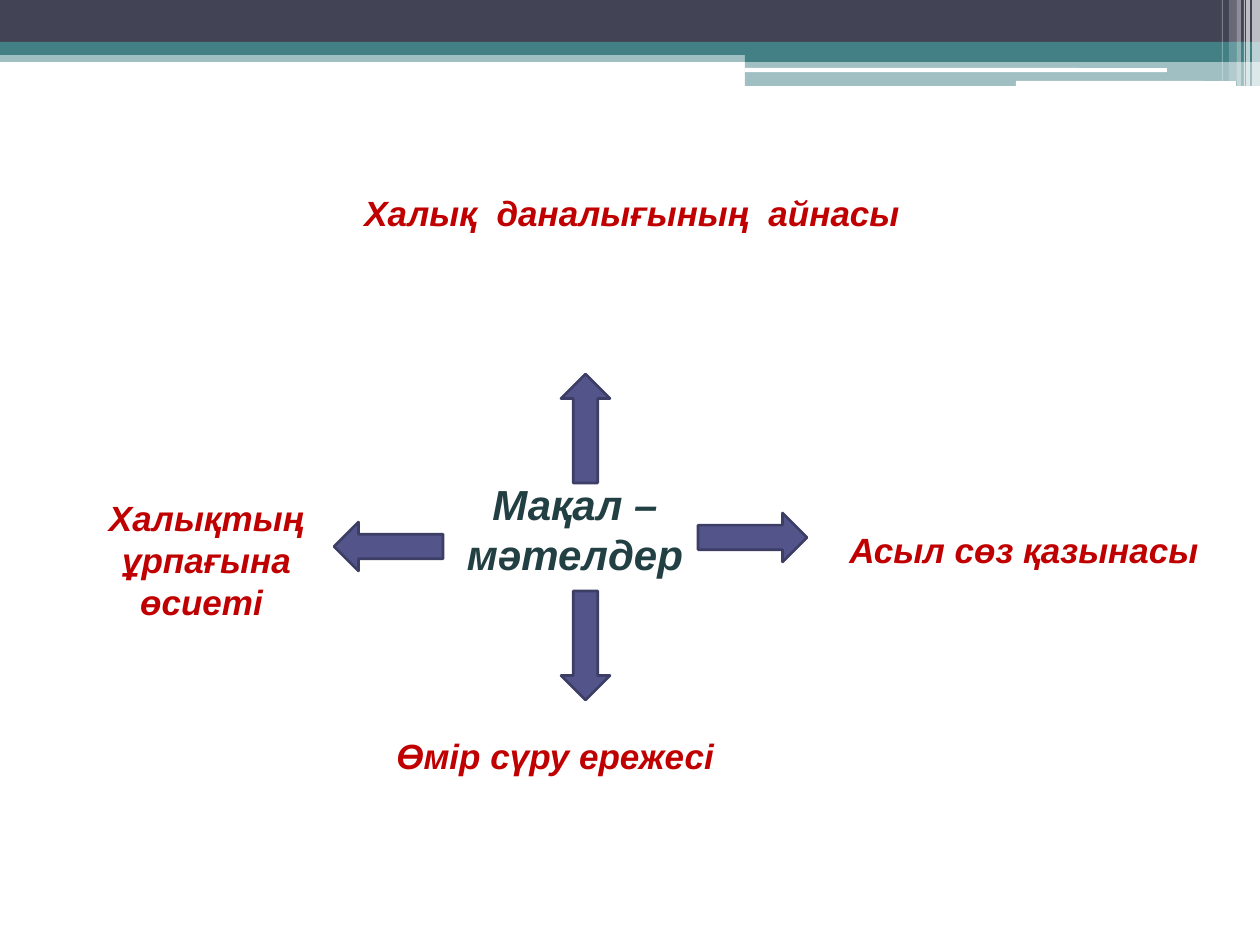
from pptx import Presentation
from pptx.dml.color import RGBColor
from pptx.enum.shapes import MSO_SHAPE
from pptx.enum.text import MSO_ANCHOR, MSO_AUTO_SIZE, PP_ALIGN
from pptx.oxml.ns import qn
from pptx.util import Emu, Pt
from lxml.etree import SubElement

WHITE = RGBColor(0xFF, 0xFF, 0xFF)
NAVY = RGBColor(0x42, 0x44, 0x56)
TEAL = RGBColor(0x43, 0x80, 0x86)
DEEP = RGBColor(0x22, 0x40, 0x43)
RED = RGBColor(0xC0, 0x00, 0x00)
VIOLET = RGBColor(0x53, 0x54, 0x8A)
EDGE = RGBColor(0x3D, 0x3E, 0x66)


def px(count):
    return Emu(round(count * 914400 / 126))


def place(shape, box):
    shape.left, shape.top, shape.width, shape.height = map(px, box)


def add_form(slide, kind, box, color, alpha=100):
    shape = slide.shapes.add_shape(kind, *map(px, box))
    shape.shadow.inherit = False
    shape.fill.solid()
    shape.fill.fore_color.rgb = color
    shape.line.fill.background()
    if alpha < 100:
        tint = shape.fill._xPr.find(qn("a:solidFill"))[0]
        SubElement(tint, qn("a:alpha")).set("val", str(alpha * 1000))
    return shape


def write(shape, text, size=20, color=RED, align=PP_ALIGN.CENTER):
    frame = shape.text_frame
    frame.word_wrap = True
    frame.auto_size = MSO_AUTO_SIZE.NONE
    frame.vertical_anchor = MSO_ANCHOR.TOP
    line = frame.paragraphs[0]
    line.alignment = align
    run = line.add_run()
    run.text = text
    font = run.font
    font.name, font.size = "Arial", Pt(size)
    font.bold = font.italic = True
    font.color.rgb = color


def draw_header(slide, box):
    left, top, width, height = box
    right = left + width
    tab = left + 745
    bars = [
        (left, 50, width, 12, TEAL, 50),
        (left, 0, width, 42, NAVY, 100),
        (left, 42, width, 13, TEAL, 100),
        (tab, 49, right - tab, 13, TEAL, 100),
        (tab, 62, right - tab, height - 62, TEAL, 50),
    ]
    for x, y, w, h, color, alpha in bars:
        add_form(slide, MSO_SHAPE.RECTANGLE, (x, top + y, w, h), color, alpha)
    for x, y, w, h in [(tab, 68, 422, 4), (left + 1016, 81, 220, 5)]:
        add_form(slide, MSO_SHAPE.ROUNDED_RECTANGLE, (x, top + y, w, h), WHITE)
    stripes = [(8, 8, 86, 65), (14, 4, 86, 65), (16, 1, 86, 60),
               (23, 4, 86, 40), (31, 8, 81, 20), (38, 1, 81, 30)]
    for back, w, h, alpha in stripes:
        add_form(slide, MSO_SHAPE.RECTANGLE, (right - back, top, w, h), WHITE, alpha)


def draw_hub(slide, box):
    left, top, width, height = box
    title = slide.shapes.title
    place(title, box)
    write(title, "Мақал – мәтелдер ", size=24, color=DEEP)
    wide, tall = 49, 109
    arrows = [(109, -98, 0), (109, 119, 180), (-88, 20, 270), (276, 11, 90)]
    for x, y, angle in arrows:
        arrow = add_form(slide, MSO_SHAPE.UP_ARROW,
                         (left + x, top + y, wide, tall), VIOLET)
        arrow.rotation = angle
        arrow.line.color.rgb = EDGE
        arrow.line.width = Pt(1.5)


def draw_labels(slide, box):
    left, top, width, height = box
    labels = [
        (158, 0, 840, 55, "Халық  даналығының  айнасы ", PP_ALIGN.CENTER),
        (325, 543, 532, 55, "Өмір сүру ережесі", PP_ALIGN.LEFT),
        (0, 305, 295, 140, "Халықтың ұрпағына өсиеті ", PP_ALIGN.CENTER),
        (778, 337, 393, 55, "Асыл сөз қазынасы", PP_ALIGN.LEFT),
    ]
    for x, y, w, h, text, align in labels:
        label = slide.shapes.add_textbox(*map(px, (left + x, top + y, w, h)))
        write(label, text, align=align)


def main():
    deck = Presentation()
    deck.slide_width, deck.slide_height = px(1260), px(945)
    slide = deck.slides.add_slide(deck.slide_layouts[5])
    draw_header(slide, (0, 0, 1260, 86))
    draw_hub(slide, (452, 472, 246, 115))
    draw_labels(slide, (59, 185, 1171, 598))
    deck.save("out.pptx")


if __name__ == "__main__":
    main()
